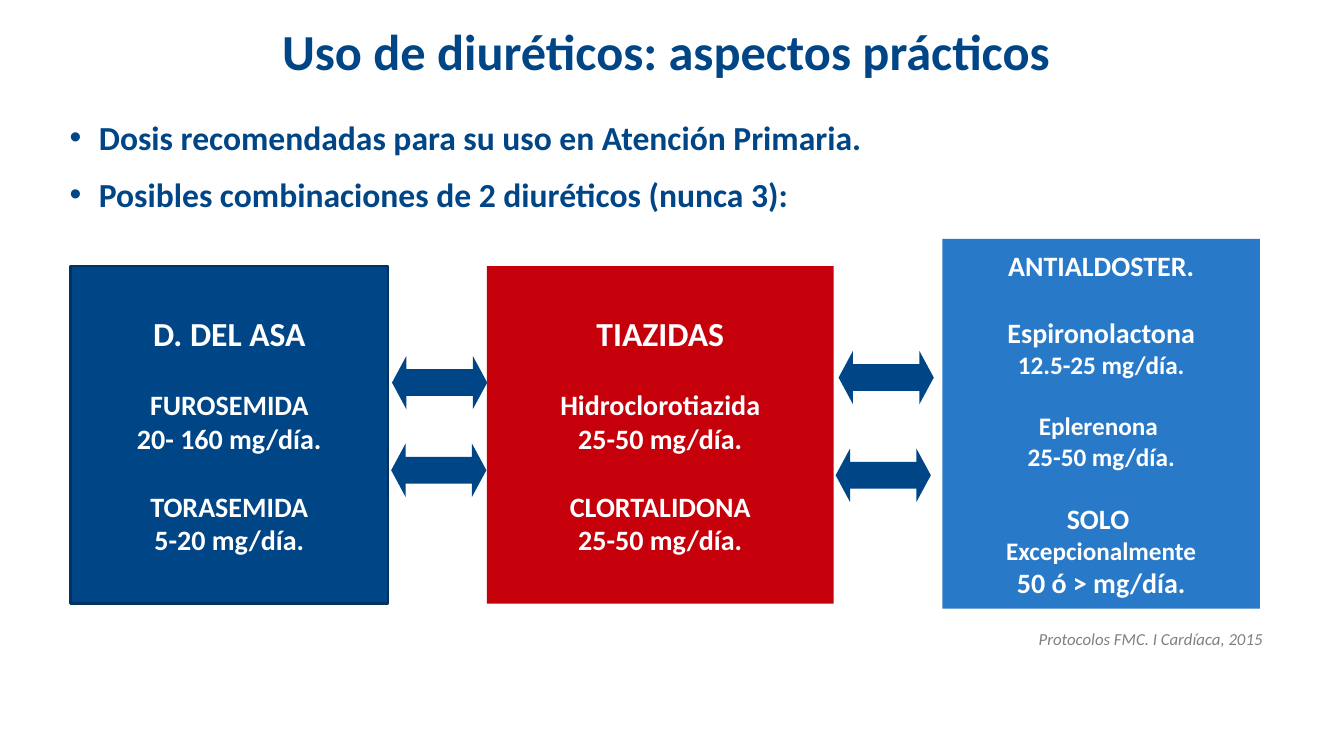
import pptx
import pptx.dml.color
import pptx.enum.shapes
import pptx.enum.text
import pptx.oxml.ns
import pptx.util
from lxml import etree

Pt = pptx.util.Pt
ALIGN = pptx.enum.text.PP_ALIGN
ANCHOR = pptx.enum.text.MSO_ANCHOR
SHAPE = pptx.enum.shapes.MSO_SHAPE

COLORS = {
    "navy": "004586",
    "navy_edge": "003363",
    "red": "C5000B",
    "blue": "287AC8",
    "white": "FFFFFF",
    "gray": "808080",
}

TITLE = "Uso de diuréticos: aspectos prácticos "
BULLETS = [
    "Dosis recomendadas para su uso en Atención Primaria.",
    "Posibles combinaciones de 2 diuréticos (nunca 3):",
]
CITATION = "Protocolos FMC. I Cardíaca, 2015 "

# Each line of a drug box: text, size, space before
DRUG_BOXES = [
    {
        "place": (50.4, 190, 226.8, 241.2), "fill": "navy", "edge": "navy_edge",
        "lines": [
            ("D. DEL ASA", 24, 0),
            ("FUROSEMIDA", 20, 24.4),
            ("20- 160 mg/día.", 20, 0),
            ("TORASEMIDA", 20, 24.4),
            ("5-20 mg/día.", 20, 0),
        ],
    },
    {
        "place": (347.8, 190, 247.7, 241.2), "fill": "red", "edge": None,
        "lines": [
            ("TIAZIDAS", 24, 0),
            ("Hidroclorotiazida", 20, 24.4),
            ("25-50 mg/día.", 20, 0),
            ("CLORTALIDONA", 20, 24.4),
            ("25-50 mg/día.", 20, 0),
        ],
    },
    {
        "place": (673.2, 170.6, 226.8, 264.2), "fill": "blue", "edge": None,
        "lines": [
            ("ANTIALDOSTER.", 20, 0),
            ("Espironolactona", 20, 24.4),
            ("12.5-25 mg/día.", 18, 0),
            ("Eplerenona ", 18, 22),
            ("25-50 mg/día.", 18, 0),
            ("SOLO ", 20, 22),
            ("Excepcionalmente", 18, 0),
            ("50 ó > mg/día.", 20, 0),
        ],
    },
]

ARROW_SIZE = (68, 38.2)
ARROW_PAIRS = [
    [(280, 254.2), (279.4, 316.8)],
    [(596.9, 320.4), (599, 250.6)],
]


def rgb(name):
    return pptx.dml.color.RGBColor.from_string(COLORS[name])


def set_bullet(paragraph, character=None, margin=0, hanging=0):
    """Give the paragraph a bullet, or none when no character is given."""
    properties = paragraph._p.get_or_add_pPr()
    properties.set("marL", str(Pt(margin)))
    properties.set("indent", str(-Pt(hanging)))
    tag = "a:buChar" if character else "a:buNone"
    bullet = etree.SubElement(properties, pptx.oxml.ns.qn(tag))
    if character:
        bullet.set("char", character)


def write(paragraph, text, size, color, align, bold=False, italic=False, before=0):
    paragraph.text = text
    paragraph.alignment = align
    paragraph.space_before = Pt(before)
    font = paragraph.font
    font.name, font.size, font.bold, font.italic = "Calibri", Pt(size), bold, italic
    font.color.rgb = rgb(color)


def next_paragraph(frame, index):
    return frame.add_paragraph() if index else frame.paragraphs[0]


def place(shape, left, top, width, height, anchor):
    """Move a placeholder and stop it from shrinking its text."""
    shape.left, shape.top, shape.width, shape.height = map(Pt, (left, top, width, height))
    shape.text_frame.auto_size = pptx.enum.text.MSO_AUTO_SIZE.NONE
    shape.text_frame.vertical_anchor = anchor
    return shape.text_frame


def add_filled(shapes, kind, bounds, fill, edge=None):
    shape = shapes.add_shape(kind, *map(Pt, bounds))
    shape.shadow.inherit = False
    shape.fill.solid()
    shape.fill.fore_color.rgb = rgb(fill)
    if edge:
        shape.line.color.rgb = rgb(edge)
        shape.line.width = Pt(2)
    else:
        shape.line.fill.background()
    return shape


def add_drug_box(slide, box):
    shape = add_filled(slide.shapes, SHAPE.RECTANGLE, box["place"], box["fill"], box["edge"])
    frame = shape.text_frame
    frame.word_wrap = False
    frame.vertical_anchor = ANCHOR.MIDDLE
    for index, (text, size, before) in enumerate(box["lines"]):
        write(next_paragraph(frame, index), text, size, "white", ALIGN.CENTER,
              bold=True, before=before)


def add_arrow_pair(slide, corners):
    group = slide.shapes.add_group_shape()
    for corner in corners:
        arrow = add_filled(group.shapes, SHAPE.LEFT_RIGHT_ARROW, corner + ARROW_SIZE, "navy")
        arrow.adjustments[0] = 0.5
        arrow.adjustments[1] = 0.27


def main():
    presentation = pptx.Presentation()
    presentation.slide_width, presentation.slide_height = Pt(960), Pt(540)
    slide = presentation.slides.add_slide(presentation.slide_layouts[3])

    for box in DRUG_BOXES:
        add_drug_box(slide, box)
    for corners in ARROW_PAIRS:
        add_arrow_pair(slide, corners)

    title = place(slide.shapes.title, 48, 12.2, 864, 47.5, ANCHOR.MIDDLE)
    write(title.paragraphs[0], TITLE, 36, "navy", ALIGN.CENTER, bold=True)

    body = place(slide.placeholders[1], 0, 80, 912, 99.4, ANCHOR.TOP)
    for index, text in enumerate(BULLETS):
        paragraph = next_paragraph(body, index)
        set_bullet(paragraph, "•", margin=63.4, hanging=20.9)
        write(paragraph, text, 24, "navy", ALIGN.LEFT, bold=True, before=12 * index)

    citation = place(slide.placeholders[2], 0, 445.7, 912, 23, ANCHOR.TOP)
    set_bullet(citation.paragraphs[0])
    write(citation.paragraphs[0], CITATION, 12, "gray", ALIGN.RIGHT, italic=True)

    presentation.save("out.pptx")


if __name__ == "__main__":
    main()
